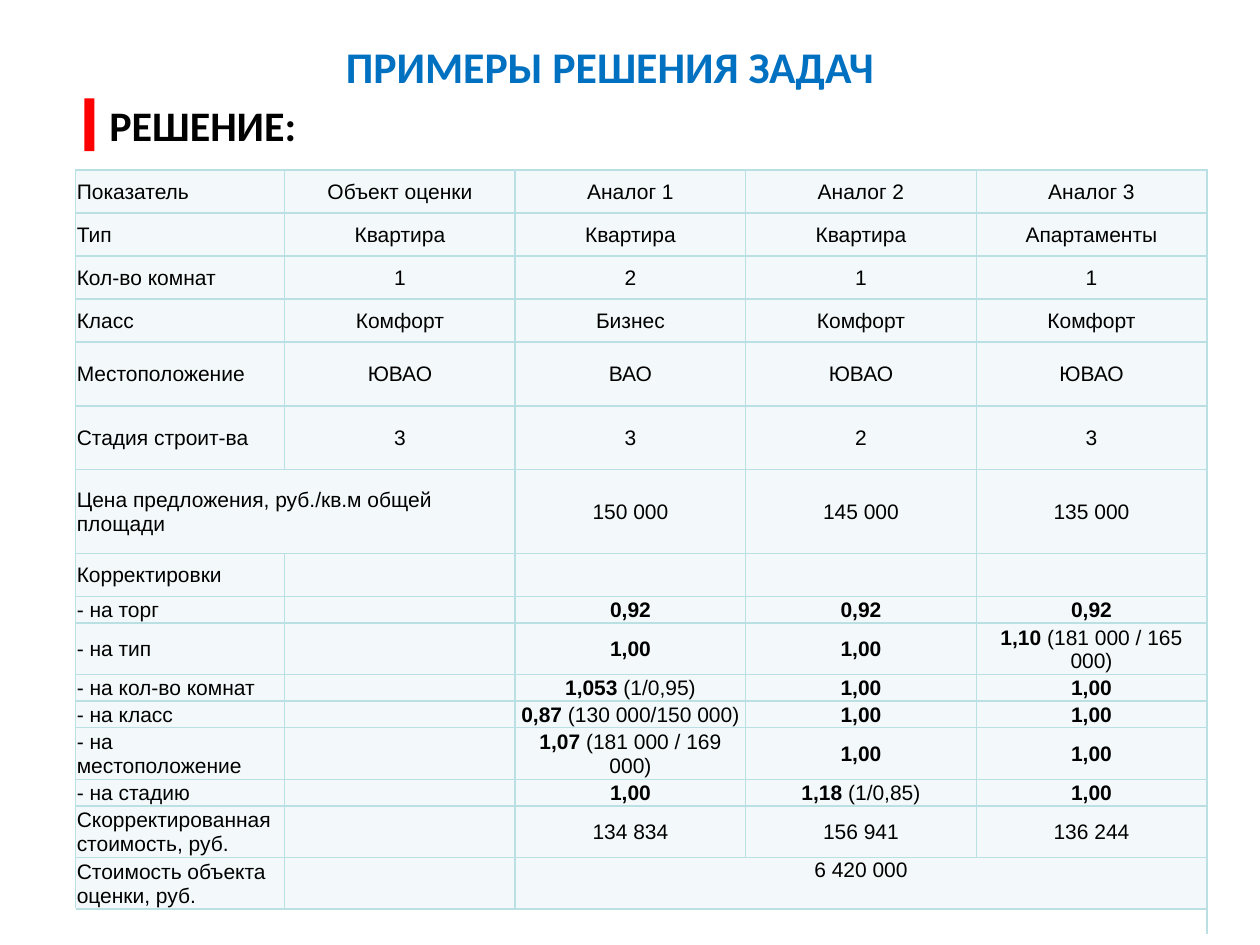
import pptx
import pptx.util
import pptx.dml.color
import pptx.enum.shapes
import pptx.enum.text
import pptx.oxml
import pptx.oxml.ns

Pt = pptx.util.Pt
ALIGN = pptx.enum.text.PP_ALIGN
ANCHOR = pptx.enum.text.MSO_ANCHOR
COLORS = {"title": "0070C0", "bar": "FF0000", "text": "000000",
          "cell": "F3F9FA", "edge": "BBE0E3"}
WIDTHS = [119.5] + [131.75] * 4
HEIGHTS = [24.6] * 4 + [36.4] * 2 + [48, 24.6, 14.9, 29.6, 14.9, 14.9,
                                     29.6, 14.9, 29.4, 29.4, 14.4]
ROWS = [
    ["Показатель", "Объект оценки", "Аналог 1", "Аналог 2", "Аналог 3"],
    ["Тип", "Квартира", "Квартира", "Квартира", "Апартаменты"],
    ["Кол-во комнат", "1", "2", "1", "1"],
    ["Класс", "Комфорт", "Бизнес", "Комфорт", "Комфорт"],
    ["Местоположение", "ЮВАО", "ВАО", "ЮВАО", "ЮВАО"],
    ["Стадия строит-ва", "3", "3", "2", "3"],
    ["Цена предложения, руб./кв.м общей площади", "",
     "150 000", "145 000", "135 000"],
    ["Корректировки", "", "", "", ""],
    ["- на торг", "", "0,92", "0,92", "0,92"],
    ["- на тип", "", "1,00", "1,00", "1,10 (181 000 / 165 000)"],
    ["- на кол-во комнат", "", "1,053 (1/0,95)", "1,00", "1,00"],
    ["- на класс", "", "0,87 (130 000/150 000)", "1,00", "1,00"],
    ["- на местоположение", "", "1,07 (181 000 / 169 000)", "1,00", "1,00"],
    ["- на стадию", "", "1,00", "1,18 (1/0,85)", "1,00"],
    ["Скорректированная стоимость, руб.", "",
     "134 834", "156 941", "136 244"],
    ["Стоимость объекта оценки, руб.", "", "6 420 000", "", ""],
    ["", "", "", "", ""],
]
FACTORS = range(8, 14)
TOTAL, LAST = 15, 16
SPANS = [(6, 0, 1), (TOTAL, 2, 4), (LAST, 0, 4)]


def tint(name):
    return pptx.dml.color.RGBColor.from_string(COLORS[name])


def add_run(para, text, size, font, color="text", bold=False):
    run = para.add_run()
    run.text = text
    run.font.size = Pt(size)
    run.font.name = font
    run.font.bold = bold
    run.font.color.rgb = tint(color)


def place(shape, left, top, width, height):
    shape.left, shape.top = Pt(left), Pt(top)
    shape.width, shape.height = Pt(width), Pt(height)


def add_title(slide):
    title = slide.shapes.title
    place(title, 76.3, 18.7, 544.3, 37.5)
    frame = title.text_frame
    frame.vertical_anchor = ANCHOR.MIDDLE
    frame.auto_size = pptx.enum.text.MSO_AUTO_SIZE.NONE
    para = frame.paragraphs[0]
    para.alignment = ALIGN.CENTER
    add_run(para, "ПРИМЕРЫ РЕШЕНИЯ ЗАДАЧ", 25, "Calibri", "title", True)


def add_bar(slide):
    kind = pptx.enum.shapes.MSO_SHAPE.RECTANGLE
    bar = slide.shapes.add_shape(kind, Pt(48.2), Pt(56.2), Pt(5.8), Pt(30.2))
    bar.shadow.inherit = False
    bar.fill.solid()
    bar.fill.fore_color.rgb = tint("bar")
    bar.line.fill.background()


def add_label(slide):
    box = slide.shapes.add_textbox(Pt(55.4), Pt(53.3), Pt(128.2), Pt(36))
    box.text_frame.word_wrap = False
    para = box.text_frame.paragraphs[0]
    add_run(para, "РЕШЕНИЕ:", 24, "Calibri", bold=True)


def add_edge(cell, side):
    cell._tc.get_or_add_tcPr().append(pptx.oxml.parse_xml(
        f'<a:ln{side} {pptx.oxml.ns.nsdecls("a")} w="12700"><a:solidFill>'
        f'<a:srgbClr val="{COLORS["edge"]}"/></a:solidFill></a:ln{side}>'))


def style_cell(cell, row, col):
    if row < LAST:
        sides = "LRTB"
    else:
        sides = "RT" if col in (0, 4) else "T"
    for side in sides:
        add_edge(cell, side)
    if row < LAST:
        cell.fill.solid()
        cell.fill.fore_color.rgb = tint("cell")
    else:
        cell.fill.background()
    cell.margin_left = cell.margin_right = cell.margin_top = Pt(0.7)
    cell.margin_bottom = Pt(0)
    top = row == TOTAL and col >= 2
    cell.vertical_anchor = ANCHOR.TOP if top else ANCHOR.MIDDLE


def fill_cell(cell, text, row, col):
    para = cell.text_frame.paragraphs[0]
    para.alignment = ALIGN.CENTER if col else ALIGN.LEFT
    if not text:
        end = pptx.oxml.parse_xml(
            f'<a:endParaRPr {pptx.oxml.ns.nsdecls("a")} sz="1000"/>')
        para._p.append(end)
    elif row in FACTORS and col:
        value, gap, note = text.partition(" ")
        add_run(para, value, 12, "Arial", bold=True)
        if note:
            add_run(para, gap + note, 12, "Arial")
    else:
        add_run(para, text, 12, "Arial")


def add_grid(slide):
    frame = slide.shapes.add_table(
        len(ROWS), len(WIDTHS), Pt(43.2), Pt(97.2),
        Pt(sum(WIDTHS)), Pt(sum(HEIGHTS)))
    grid = frame.table
    grid.first_row = grid.horz_banding = False
    for col, width in zip(grid.columns, WIDTHS):
        col.width = Pt(width)
    for line, height in zip(grid.rows, HEIGHTS):
        line.height = Pt(height)
    for row, texts in enumerate(ROWS):
        for col, text in enumerate(texts):
            cell = grid.cell(row, col)
            style_cell(cell, row, col)
            fill_cell(cell, text, row, col)
    for row, start, stop in SPANS:
        grid.cell(row, start).merge(grid.cell(row, stop))


def main():
    deck = pptx.Presentation()
    deck.slide_width, deck.slide_height = Pt(720), Pt(540)
    slide = deck.slides.add_slide(deck.slide_layouts[5])
    add_title(slide)
    add_bar(slide)
    add_label(slide)
    add_grid(slide)
    deck.save("out.pptx")


if __name__ == "__main__":
    main()
